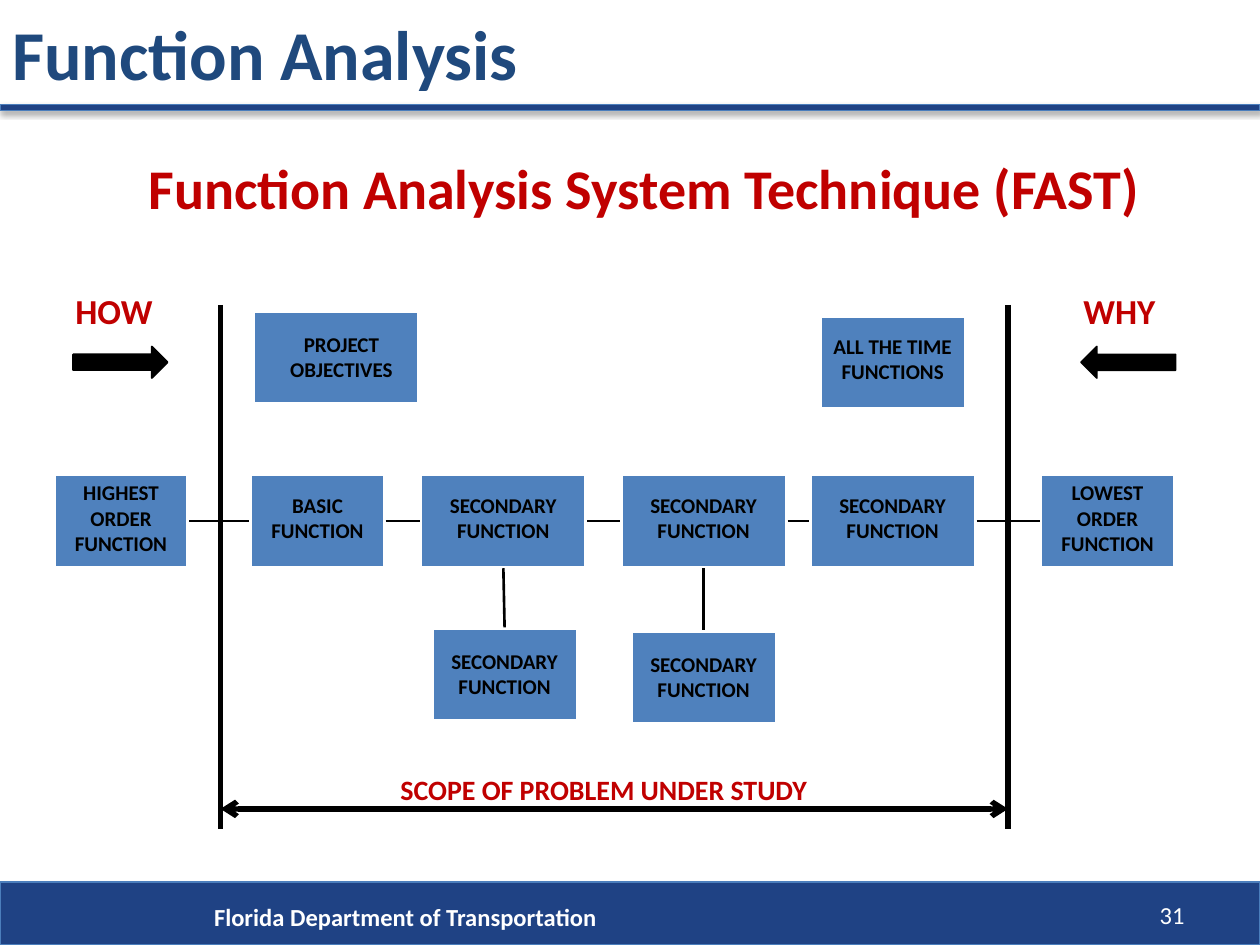
from dataclasses import dataclass
from itertools import pairwise

from lxml.etree import SubElement
from pptx import Presentation
from pptx.dml.color import RGBColor
from pptx.enum.shapes import MSO_CONNECTOR, MSO_SHAPE
from pptx.enum.text import MSO_ANCHOR, MSO_AUTO_SIZE, PP_ALIGN
from pptx.oxml.ns import qn
from pptx.shapes.autoshape import Shape
from pptx.shapes.connector import Connector
from pptx.slide import Slide
from pptx.util import Inches, Pt

NAVY = RGBColor(0x1F, 0x42, 0x84)
NAVY_EDGE = RGBColor(0x4B, 0x7E, 0xBC)
TITLE_BLUE = RGBColor(0x1F, 0x49, 0x7D)
BOX_BLUE = RGBColor(0x4F, 0x81, 0xBD)
RED = RGBColor(0xC0, 0x00, 0x00)
BLACK = RGBColor(0, 0, 0)
WHITE = RGBColor(0xFF, 0xFF, 0xFF)

TOP, LEFT, BOTTOM, RIGHT = range(4)
BOX_HEIGHT = 0.75
ROW_TOP = 3.76
SCOPE_LEFT, SCOPE_RIGHT = 1.75, 8


@dataclass
class FunctionBox:
    text: str
    left: float
    top: float
    width: float
    caption_drop: float = 0.1
    caption_height: float = 0.5
    caption_shift: float = 0
    caption_extra: float = 0


CHAIN = [
    FunctionBox("HIGHEST ORDER FUNCTION", 0.42, ROW_TOP, 1.08, 0, 0.71),
    FunctionBox("BASIC FUNCTION", 1.98, ROW_TOP, 1.08),
    FunctionBox("SECONDARY FUNCTION", 3.33, ROW_TOP, 1.33),
    FunctionBox("SECONDARY FUNCTION", 4.92, ROW_TOP, 1.33),
    FunctionBox("SECONDARY FUNCTION", 6.42, ROW_TOP, 1.33),
    FunctionBox("LOWEST ORDER FUNCTION", 8.25, ROW_TOP, 1.08, 0, 0.71),
]
# Supporting functions, keyed by the chain position they hang from
SUPPORTING = {
    2: FunctionBox("SECONDARY FUNCTION", 3.42, 4.98, 1.17, 0.12),
    3: FunctionBox("SECONDARY FUNCTION", 5, 5, 1.17, 0.12),
}
SEPARATE = [
    FunctionBox("ALL THE TIME FUNCTIONS", 6.5, 2.5, 1.17,
                caption_shift=-0.08, caption_extra=0.16),
    FunctionBox("PROJECT OBJECTIVES", 2, 2.46, 1.33, 0.12, caption_extra=0.09),
]


def add_text(page: Slide, text: str, left: float, top: float, width: float, height: float,
             size: float, color: RGBColor, bold: bool = True,
             align: PP_ALIGN = PP_ALIGN.LEFT, anchor: MSO_ANCHOR = MSO_ANCHOR.TOP,
             grow: bool = False) -> None:
    box = page.shapes.add_textbox(Inches(left), Inches(top), Inches(width), Inches(height))
    frame = box.text_frame
    fit = MSO_AUTO_SIZE.SHAPE_TO_FIT_TEXT if grow else MSO_AUTO_SIZE.NONE
    frame_format = {"word_wrap": True, "auto_size": fit, "vertical_anchor": anchor}
    for name, value in frame_format.items():
        setattr(frame, name, value)
    para = frame.paragraphs[0]
    para.alignment = align
    span = para.add_run()
    span.text = text
    for name, value in {"name": "Calibri", "size": Pt(size), "bold": bold}.items():
        setattr(span.font, name, value)
    span.font.color.rgb = color


def add_block(page: Slide, kind: MSO_SHAPE, left: float, top: float, width: float,
              height: float, fill: RGBColor, edge: RGBColor, edge_width: float) -> Shape:
    block = page.shapes.add_shape(kind, Inches(left), Inches(top), Inches(width), Inches(height))
    block.shadow.inherit = False
    block.fill.solid()
    block.fill.fore_color.rgb = fill
    block.line.color.rgb = edge
    block.line.width = Pt(edge_width)
    return block


def add_bar(page: Slide, top: float, height: float) -> None:
    """Full-width navy bar with a soft shadow below it."""
    bar = add_block(page, MSO_SHAPE.RECTANGLE, 0, top, 10, height, NAVY, NAVY_EDGE, 0.75)
    effects = bar.element.spPr.find(qn("a:effectLst"))
    shadow = SubElement(effects, qn("a:outerShdw"), blurRad=str(Pt(3.1)), dist=str(Pt(1.8)),
                        dir="5400000", rotWithShape="0")
    shade = SubElement(shadow, qn("a:srgbClr"), val=str(BLACK))
    SubElement(shade, qn("a:alpha"), val="35000")


def add_function(page: Slide, item: FunctionBox) -> Shape:
    block = add_block(page, MSO_SHAPE.RECTANGLE, item.left, item.top, item.width, BOX_HEIGHT,
                      BOX_BLUE, WHITE, 3)
    add_text(page, item.text, item.left + item.caption_shift, item.top + item.caption_drop,
             item.width + item.caption_extra, item.caption_height, 12, BLACK,
             align=PP_ALIGN.CENTER, grow=True)
    return block


def add_line(page: Slide, start: tuple[float, float], end: tuple[float, float],
             width: float) -> Connector:
    line = page.shapes.add_connector(MSO_CONNECTOR.STRAIGHT, *map(Inches, start + end))
    line.line.color.rgb = BLACK
    line.line.width = Pt(width)
    SubElement(line.element.spPr, qn("a:effectLst"))
    return line


def join(page: Slide, first: Shape, first_side: int, second: Shape, second_side: int) -> None:
    line = add_line(page, (0, 0), (0, 0), 1.5)
    line.begin_connect(first, first_side)
    line.end_connect(second, second_side)


def main() -> None:
    deck = Presentation()
    deck.slide_width, deck.slide_height = Inches(10), Inches(7.5)
    page = deck.slides.add_slide(deck.slide_layouts[6])

    # Footer, header rule and titles
    add_bar(page, 7, 0.5)
    add_text(page, "Florida Department of Transportation", 1.6, 7.11, 7.98, 0.34, 14, WHITE,
             grow=True)
    add_bar(page, 0.83, 0.05)
    add_text(page, "31", 7.17, 7.09, 2.33, 0.36, 14, WHITE, bold=False, align=PP_ALIGN.RIGHT)
    add_text(page, "Function Analysis", 0, 0, 9.65, 0.83, 40, TITLE_BLUE,
             anchor=MSO_ANCHOR.MIDDLE)
    add_text(page, "Function Analysis System Technique (FAST)", 1.08, 1.17, 8.17, 0.75, 32, RED)

    # Scope limits
    for x in (SCOPE_LEFT, SCOPE_RIGHT):
        add_line(page, (x, 2.42), (x, 6.58), 3)

    # Reading directions
    for word, left, rotation in (("HOW", 0.5, 0), ("WHY", 8.5, 180)):
        arrow = add_block(page, MSO_SHAPE.RIGHT_ARROW, left + 0.08, 2.75, 0.75, 0.25,
                          BLACK, BLACK, 1)
        arrow.rotation = rotation
        add_text(page, word, left, 2.25, 0.92, 0.44, 20, RED, grow=True)

    # Function boxes
    chain = [add_function(page, item) for item in CHAIN]
    supporting = {index: add_function(page, item) for index, item in SUPPORTING.items()}
    for item in SEPARATE:
        add_function(page, item)

    # Scope arrow
    scope = add_line(page, (SCOPE_LEFT, 6.42), (SCOPE_RIGHT, 6.42), 3)
    outline = scope.line._get_or_add_ln()
    for tag in ("a:headEnd", "a:tailEnd"):
        SubElement(outline, qn(tag), type="arrow")
    add_text(page, "SCOPE OF PROBLEM UNDER STUDY", 3.08, 6.08, 3.5, 0.37, 16, RED, grow=True)

    # Links between functions
    for first, second in pairwise(chain):
        join(page, first, RIGHT, second, LEFT)
    for index, block in supporting.items():
        join(page, chain[index], BOTTOM, block, TOP)

    deck.save("out.pptx")


if __name__ == "__main__":
    main()
